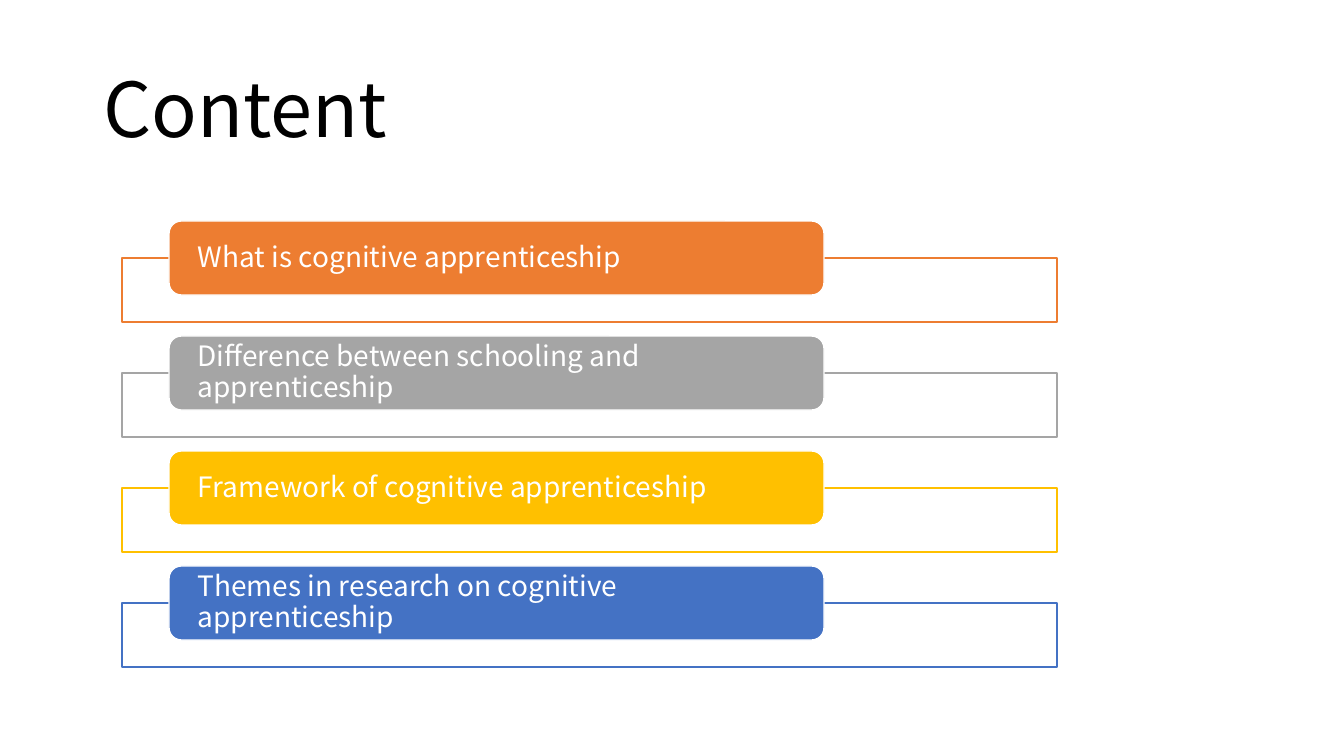
"""Build a content slide with four labelled agenda rows."""
import pptx
import pptx.dml.color
import pptx.enum.shapes
import pptx.enum.text
import pptx.oxml
import pptx.oxml.ns
import pptx.util

EMU_PER_PX = 914400 / 100.8
FONT = "Noto Sans CJK SC"
COLORS = {
    "black": "000000",
    "white": "FFFFFF",
    "orange": "ED7D31",
    "gray": "A5A5A5",
    "gold": "FFC000",
    "blue": "4472C4",
}
TOPICS = [
    ("What is cognitive apprenticeship", "orange"),
    ("Difference between schooling and apprenticeship", "gray"),
    ("Framework of cognitive apprenticeship", "gold"),
    ("Themes in research on cognitive apprenticeship", "blue"),
]
FIRST_TOP = 221
ROW_PITCH = 115


def px(length):
    return pptx.util.Emu(round(length * EMU_PER_PX))


def color(name):
    return pptx.dml.color.RGBColor.from_string(COLORS[name])


def format_text(shape, text, size, color_name):
    frame = shape.text_frame
    frame.text = text
    frame.word_wrap = True
    frame.vertical_anchor = pptx.enum.text.MSO_ANCHOR.MIDDLE
    paragraph = frame.paragraphs[0]
    paragraph.alignment = pptx.enum.text.PP_ALIGN.LEFT
    paragraph.line_spacing = 0.9
    paragraph.font.name = FONT
    paragraph.font.size = pptx.util.Pt(size)
    paragraph.font.color.rgb = color(color_name)
    return frame


def add_title(slide, text):
    title = slide.shapes.title
    title.left, title.top, title.width, title.height = map(px, (93, 40, 1159, 146))
    format_text(title, text, 54, "black")


def add_box(slide, kind, bounds, fill, line):
    shape = slide.shapes.add_shape(kind, *map(px, bounds))
    shape.shadow.inherit = False
    shape.fill.solid()
    shape.fill.fore_color.rgb = color(fill)
    shape.line.color.rgb = color(line)
    shape.line.width = pptx.util.Pt(1)
    return shape


def add_frame(slide, top, line):
    kind = pptx.enum.shapes.MSO_SHAPE.RECTANGLE
    frame = add_box(slide, kind, (122, top, 935, 64), "white", line)
    fill_color = frame.fill._xPr.find(".//" + pptx.oxml.ns.qn("a:srgbClr"))
    alpha = pptx.oxml.parse_xml(f'<a:alpha {pptx.oxml.ns.nsdecls("a")} val="90000"/>')
    fill_color.append(alpha)


def add_label(slide, top, text, fill):
    kind = pptx.enum.shapes.MSO_SHAPE.ROUNDED_RECTANGLE
    label = add_box(slide, kind, (169, top, 655, 74), fill, "white")
    frame = format_text(label, text, 20, "white")
    frame.margin_left = frame.margin_right = px(25)
    frame.margin_top = frame.margin_bottom = 0
    frame.auto_size = pptx.enum.text.MSO_AUTO_SIZE.TEXT_TO_FIT_SHAPE


def main():
    presentation = pptx.Presentation()
    presentation.slide_width = px(1344)
    presentation.slide_height = px(756)
    slide = presentation.slides.add_slide(presentation.slide_layouts[5])
    add_title(slide, "Content")
    for row, (text, color_name) in enumerate(TOPICS):
        top = FIRST_TOP + row * ROW_PITCH
        add_frame(slide, top + 37, color_name)
        add_label(slide, top, text, color_name)
    presentation.save("out.pptx")


if __name__ == "__main__":
    main()
